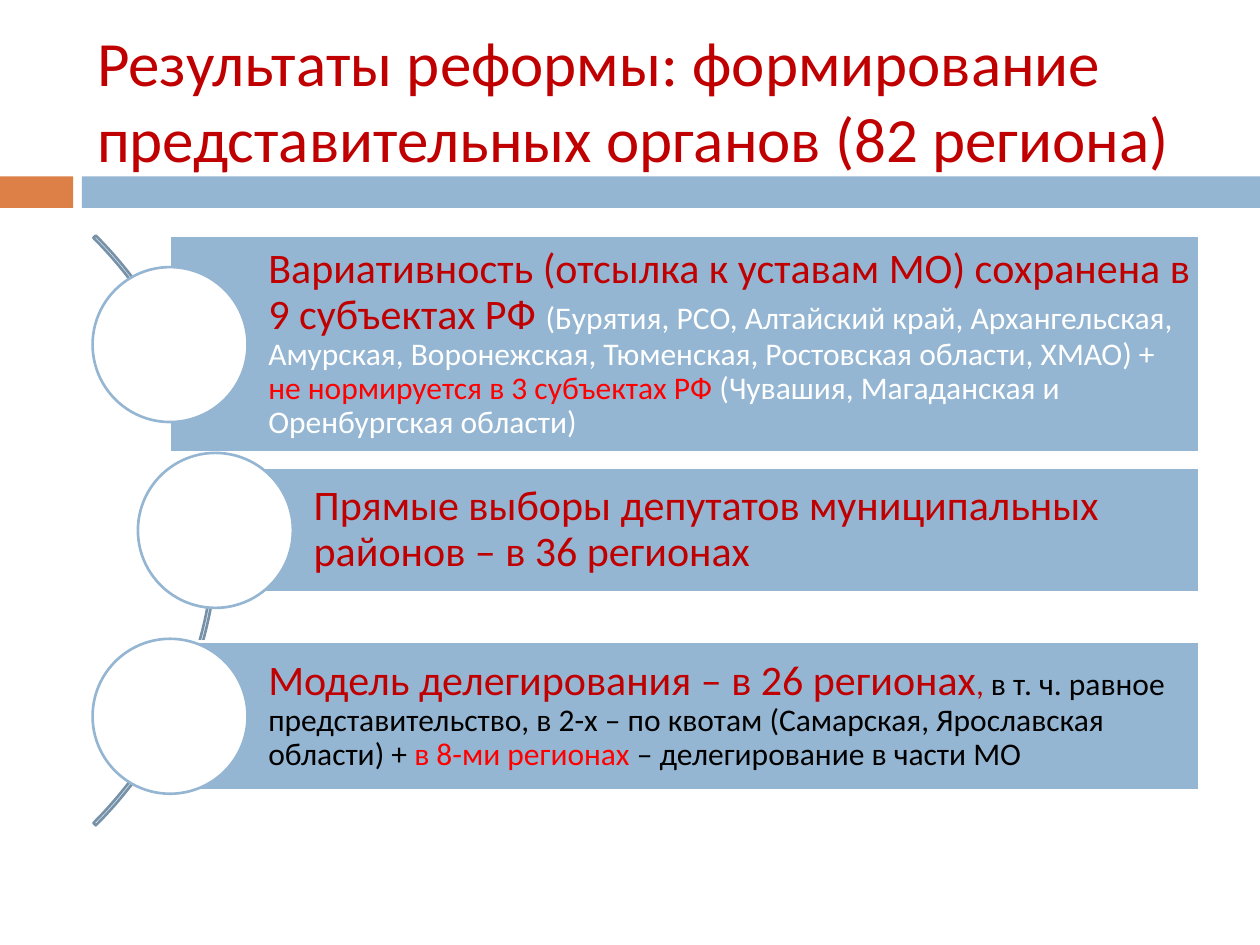
from pptx import Presentation
from pptx.dml.color import RGBColor as RGB
from pptx.enum.shapes import MSO_SHAPE as Shape
from pptx.enum.text import MSO_ANCHOR as Anchor, MSO_AUTO_SIZE as Fit, PP_ALIGN as Align
from pptx.util import Inches, Pt

HUE = {"red": "C00000", "bright": "FF0000", "white": "FFFFFF", "black": "000000",
       "blue": "94B6D2", "orange": "DD8047", "slate": "7792A8"}
TITLE = "Результаты реформы: формирование представительных органов (82 региона)"
STRIPS = [(0, 0.58, "orange"), (0.65, 9.35, "blue")]
ROWS = [
    (1.35, 1.87, 1.72, [
        ("Вариативность (отсылка к уставам МО) сохранена в 9 субъектах РФ ", 24, "red"),
        ("(Бурятия, РСО, Алтайский край, Архангельская, Амурская, Воронежская, "
         "Тюменская, Ростовская области, ХМАО) + ", 18, "white"),
        ("не нормируется в 3 субъектах РФ ", 18, "bright"),
        ("(Чувашия, Магаданская и Оренбургская области)", 18, "white")]),
    (1.71, 3.71, 0.99, [
        ("Прямые выборы депутатов муниципальных районов – в 36 регионах", 24, "red")]),
    (1.35, 5.09, 1.18, [
        ("Модель делегирования – в 26 регионах", 24, "red"),
        (", ", 18, "red"),
        ("в т. ч. равное представительство, в 2-х – по квотам "
         "(Самарская, Ярославская области) + ", 18, "black"),
        ("в 8-ми регионах ", 18, "bright"),
        ("– делегирование в части МО", 18, "black")]),
]
RIGHT, DISC, TOP, STEP = 9.52, 1.23, 2.12, 1.475


def color(name):
    return RGB.from_string(HUE[name])


def draw(kind, x, y, w, h, fill=None, line=None, width=1.5):
    shape = slide.shapes.add_shape(kind, Inches(x), Inches(y), Inches(w), Inches(h))
    shape.shadow.inherit = False
    if fill:
        shape.fill.solid()
        shape.fill.fore_color.rgb = color(fill)
    else:
        shape.fill.background()
    if line:
        shape.line.color.rgb = color(line)
        shape.line.width = Pt(width)
    else:
        shape.line.fill.background()
    return shape


def write(shape, runs):
    frame = shape.text_frame
    frame.word_wrap = True
    frame.vertical_anchor = Anchor.MIDDLE
    frame.margin_left = Inches(0.78)
    frame.margin_right = frame.margin_top = frame.margin_bottom = Inches(0.07)
    para = frame.paragraphs[0]
    para.alignment = Align.LEFT
    para.line_spacing = 0.9
    para.font.name = "Calibri"
    for text, size, hue in runs:
        run = para.add_run()
        run.text = text
        run.font.size = Pt(size)
        run.font.color.rgb = color(hue)


deck = Presentation()
deck.slide_width, deck.slide_height = Inches(10), Inches(7.5)
slide = deck.slides.add_slide(deck.slide_layouts[5])

for x, w, hue in STRIPS:
    draw(Shape.RECTANGLE, x, 1.4, w, 0.25, hue)

title = slide.shapes.title
title.left, title.top = Inches(0.67), Inches(0.25)
title.width, title.height = Inches(9.05), Inches(1.08)
title.text = TITLE
title.text_frame.auto_size = Fit.NONE
title.text_frame.vertical_anchor = Anchor.MIDDLE
head = title.text_frame.paragraphs[0]
head.alignment = Align.LEFT
head.font.name = "Calibri"
head.font.size = Pt(36)
head.font.color.rgb = color("red")

arc = draw(Shape.BLOCK_ARC, -4.89, 0.9, 6.62, 6.62, line="slate")
for i, value in enumerate((189, 27, 0.004)):
    arc.adjustments[i] = value

for i, (x, y, h, runs) in enumerate(ROWS):
    write(draw(Shape.RECTANGLE, x, y, RIGHT - x, h, "blue", "white"), runs)
    draw(Shape.OVAL, x - DISC / 2, TOP + i * STEP, DISC, DISC, "white", "blue")

deck.save("out.pptx")
